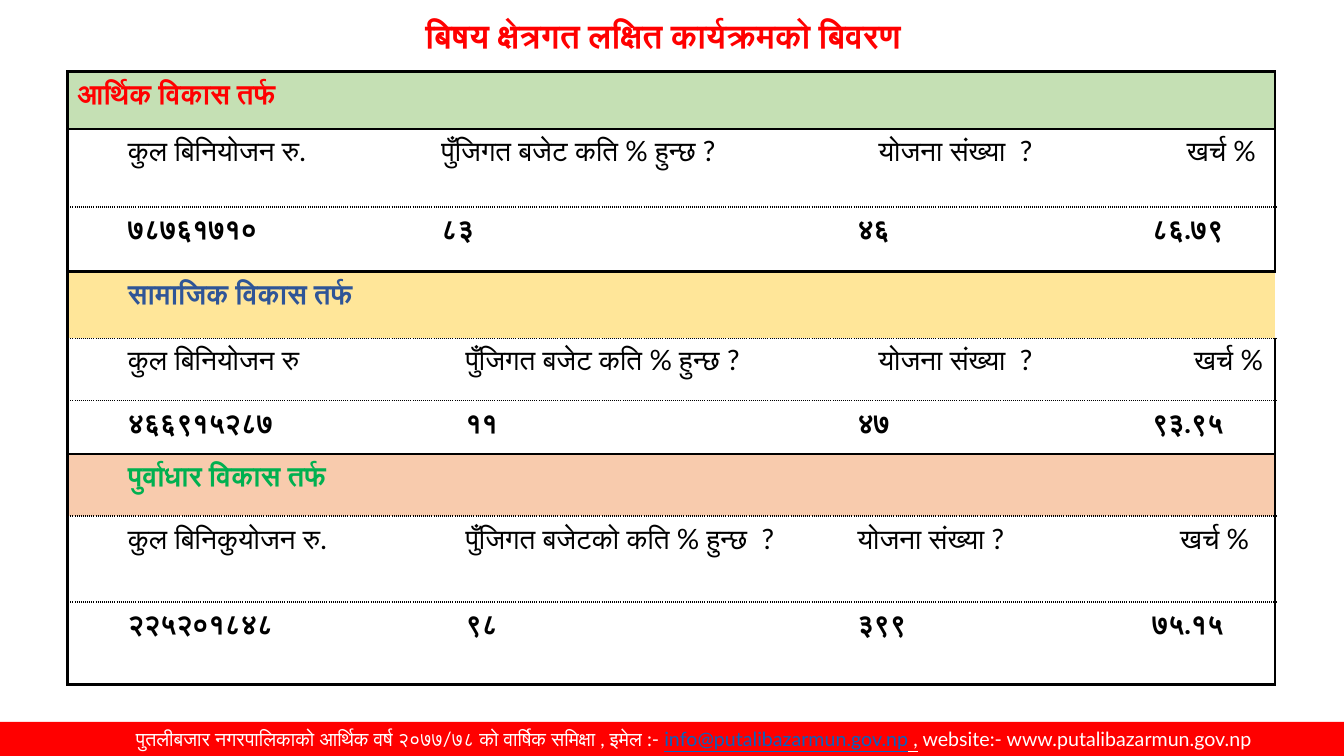
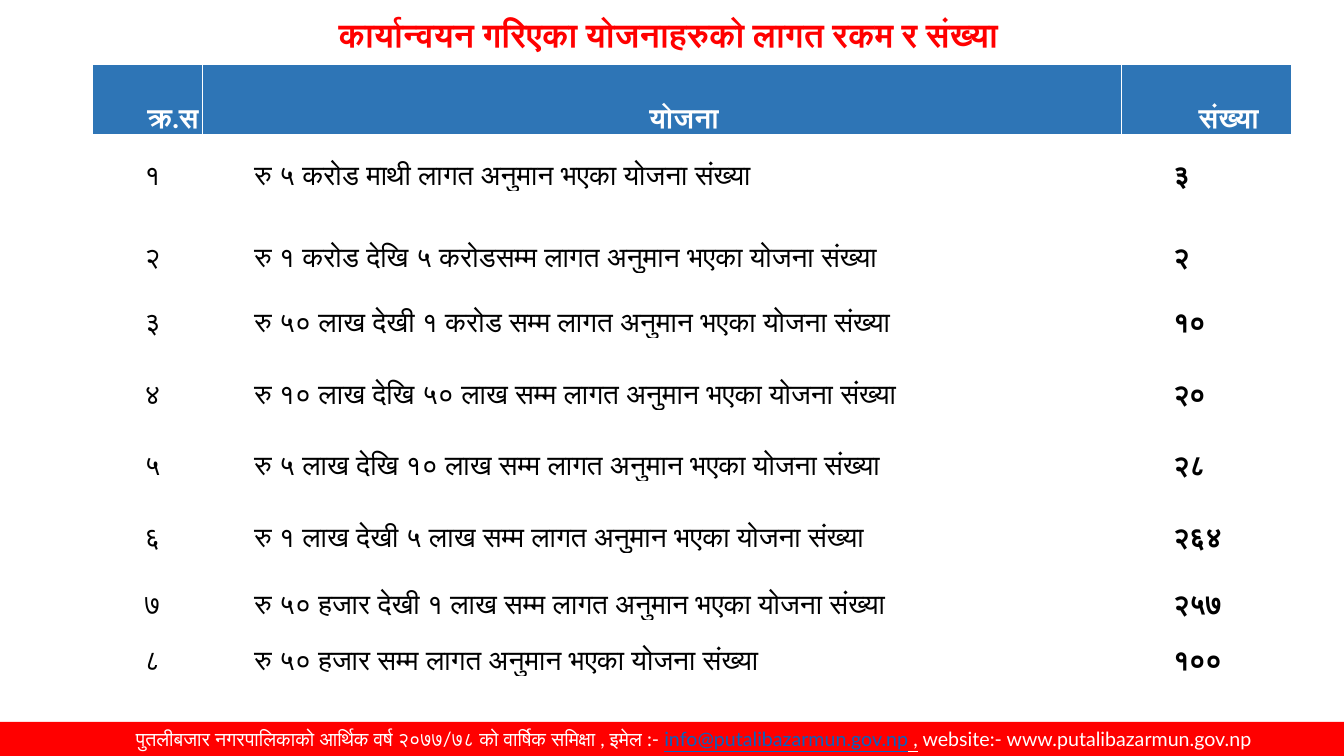
from dataclasses import dataclass
from typing import NamedTuple, Optional

from lxml import etree
from pptx import Presentation
from pptx.dml.color import RGBColor
from pptx.enum.shapes import MSO_SHAPE
from pptx.enum.text import MSO_ANCHOR, MSO_AUTO_SIZE, PP_ALIGN
from pptx.oxml.ns import qn
from pptx.util import Cm, Pt

RECTANGLE = MSO_SHAPE.RECTANGLE
CENTER = PP_ALIGN.CENTER
MIDDLE = MSO_ANCHOR.MIDDLE
BOTTOM = MSO_ANCHOR.BOTTOM
NO_AUTOFIT = MSO_AUTO_SIZE.NONE
TITLE_ONLY = 5


@dataclass(frozen=True)
class Theme:
    font: str = "Lato"
    title_size: int = 24
    table_size: int = 20
    footer_size: int = 14
    red: str = "FF0000"
    black: str = "000000"
    white: str = "FFFFFF"
    link: str = "0563C1"
    navy: str = "2F5597"
    emerald: str = "00B050"
    header_blue: str = "2E75B6"
    pale_green: str = "C5E0B4"
    pale_yellow: str = "FFE699"
    pale_orange: str = "F8CBAD"


THEME = Theme()


class Line(NamedTuple):
    color: str
    width: float
    dash: str = "solid"


class Box(NamedTuple):
    left: float
    top: float
    width: float
    height: float

    def lengths(self) -> tuple:
        return tuple(Cm(value) for value in self)


class Label(NamedTuple):
    text: str
    shift: float = 0


@dataclass(frozen=True)
class Section:
    heading: str
    color: str
    fill: str
    heading_indent: float
    heading_spans: tuple
    spans: tuple
    labels: tuple
    values: tuple
    heading_rule: Line
    heights: tuple


SOLID = Line(THEME.black, 2.25)
DOTTED = Line(THEME.black, 1.5, "sysDot")
FINE_DOTTED = Line(THEME.black, 1, "sysDot")
WHITE_RULE = Line(THEME.white, 1)

SLIDE_WIDTH, SLIDE_HEIGHT = 33.87, 19.05
FOOTER_HEIGHT = 0.86
INDENT = 1.27
HEADER_INSET = 0.03

SECTOR_TITLE = "बिषय क्षेत्रगत लक्षित कार्यक्रमको बिवरण "
SECTOR_COLUMNS = (7.9, 0.41, 9.88, 7.42, 4.62)
WIDE_SECOND = ((0, 0), (1, 2), (3, 3), (4, 4))
WIDE_FIRST = ((0, 1), (2, 2), (3, 3), (4, 4))
FULL_ROW = ((0, 4),)

SECTIONS = (
    Section("आर्थिक विकास तर्फ", THEME.red, THEME.pale_green, 0, WIDE_SECOND, WIDE_SECOND,
            (Label("कुल बिनियोजन रु."), Label("पुँजिगत बजेट कति % हुन्छ ?"),
             Label("योजना संख्या  ?", 0.53), Label("खर्च %", 0.88)),
            ("७८७६१७१०", "८३", "४६", "८६.७९"), SOLID, (1.45, 1.96, 1.63)),
    Section("सामाजिक विकास तर्फ", THEME.navy, THEME.pale_yellow, INDENT, FULL_ROW, WIDE_FIRST,
            (Label("कुल बिनियोजन रु"), Label("पुँजिगत बजेट कति % हुन्छ ?"),
             Label("योजना संख्या  ?", 0.53), Label("खर्च %", 1.06)),
            ("४६६९१५२८७", "११", "४७", "९३.९५"), FINE_DOTTED, (1.68, 1.57, 1.35)),
    Section("पुर्वाधार विकास तर्फ", THEME.emerald, THEME.pale_orange, INDENT, WIDE_FIRST, WIDE_FIRST,
            (Label("कुल बिनिकुयोजन रु."), Label("पुँजिगत बजेटको कति % हुन्छ  ?"),
             Label("योजना संख्या ?"), Label("खर्च %", 0.71)),
            ("२२५२०१८४८", "९८", "३९९", "७५.१५"), DOTTED, (1.57, 2.16, 2.08)),
)

COST_TITLE = "कार्यान्वयन गरिएका योजनाहरुको लागत रकम र संख्या "
COST_COLUMNS = (2.77, 23.16, 4.29)
COST_HEIGHTS = (1.75, 1.45, 2.06, 1.65, 1.8, 1.8, 1.8, 1.7, 1.42)
COST_ROWS = (
    ("क्र.स ", "योजना ", "संख्या "),
    ("१", "रु ५ करोड माथी लागत अनुमान भएका योजना संख्या", "३"),
    ("२", "रु १ करोड देखि ५ करोडसम्म लागत अनुमान भएका योजना संख्या", "२"),
    ("३", "रु ५० लाख देखी १ करोड सम्म लागत अनुमान भएका योजना संख्या", "१०"),
    ("४", "रु १० लाख देखि ५० लाख सम्म लागत अनुमान भएका योजना संख्या", "२०"),
    ("५", "रु ५ लाख देखि १० लाख सम्म लागत अनुमान भएका योजना संख्या", "२८"),
    ("६", "रु १ लाख देखी ५ लाख सम्म लागत अनुमान भएका योजना संख्या", "२६४"),
    ("७", "रु ५० हजार देखी १ लाख सम्म लागत अनुमान भएका योजना संख्या", "२५७"),
    ("८", "रु ५० हजार सम्म लागत अनुमान भएका योजना संख्या", "१००"),
)


def write(paragraph, text: str, *, size: float = THEME.table_size, color: str = THEME.black,
          bold: bool = False, underline: bool = False, align=None,
          indent: float = 0, spacing: Optional[float] = None) -> None:
    """Append a formatted run and set the paragraph's layout."""
    if align is not None:
        paragraph.alignment = align
    if spacing is not None:
        paragraph.line_spacing = spacing
    if indent:
        properties = paragraph._p.get_or_add_pPr()
        properties.set("marL", str(Cm(indent)))
        properties.set("indent", "0")
    run = paragraph.add_run()
    run.text = text
    font = run.font
    font.size, font.bold, font.underline = Pt(size), bold, underline
    font.color.rgb = RGBColor.from_string(color)
    font.name = THEME.font
    etree.SubElement(run._r.get_or_add_rPr(), qn("a:cs"), typeface=THEME.font)


def set_borders(cell, left: Optional[Line], right: Optional[Line],
                top: Optional[Line], bottom: Optional[Line]) -> None:
    """Draw the cell's edges; call before filling, as lines precede the fill in the XML."""
    properties = cell._tc.get_or_add_tcPr()
    for tag, line in (("a:lnL", left), ("a:lnR", right), ("a:lnT", top), ("a:lnB", bottom)):
        edge = etree.SubElement(properties, qn(tag))
        if line is None:
            etree.SubElement(edge, qn("a:noFill"))
            continue
        edge.set("w", str(Pt(line.width)))
        solid = etree.SubElement(edge, qn("a:solidFill"))
        etree.SubElement(solid, qn("a:srgbClr"), val=line.color)
        etree.SubElement(edge, qn("a:prstDash"), val=line.dash)


def set_fill(cell, color: Optional[str]) -> None:
    if color is None:
        cell.fill.background()
    else:
        cell.fill.solid()
        cell.fill.fore_color.rgb = RGBColor.from_string(color)


def add_plain_table(slide, left: float, top: float, widths: tuple, heights: tuple):
    box = Box(left, top, sum(widths), sum(heights))
    table = slide.shapes.add_table(len(heights), len(widths), *box.lengths()).table
    table.first_row = table.horz_banding = False
    for column, width in zip(table.columns, widths):
        column.width = Cm(width)
    for row, height in zip(table.rows, heights):
        row.height = Cm(height)
    return table


def add_titled_slide(presentation, title: str, box: Box):
    slide = presentation.slides.add_slide(presentation.slide_layouts[TITLE_ONLY])
    heading = slide.shapes.title
    heading.left, heading.top, heading.width, heading.height = box.lengths()
    frame = heading.text_frame
    frame.auto_size = NO_AUTOFIT
    frame.vertical_anchor = MIDDLE
    write(frame.paragraphs[0], title, size=THEME.title_size, color=THEME.red,
          bold=True, align=CENTER, spacing=0.9)
    return slide


def move_footer_to_layout(slide) -> None:
    """Build the footer band once and hand it to the layout that all slides share."""
    box = Box(0, SLIDE_HEIGHT - FOOTER_HEIGHT, SLIDE_WIDTH, FOOTER_HEIGHT)
    band = slide.shapes.add_shape(RECTANGLE, *box.lengths())
    band.shadow.inherit = False
    band.fill.solid()
    band.fill.fore_color.rgb = RGBColor.from_string(THEME.red)
    band.line.fill.background()
    frame = band.text_frame
    frame.word_wrap = True
    frame.vertical_anchor = MIDDLE
    frame.margin_top = frame.margin_bottom = 0
    frame.margin_left = Cm(1.35)
    for text, color, underline in (
        ("पुतलीबजार नगरपालिकाको आर्थिक वर्ष २०७७/७८ को वार्षिक समिक्षा , इमेल :- ", THEME.white, False),
        ("info@putalibazarmun.gov.np", THEME.link, True),
        (" ,", THEME.white, True),
        (" website:- www.putalibazarmun.gov.np", THEME.white, False),
    ):
        write(frame.paragraphs[0], text, size=THEME.footer_size, color=color,
              underline=underline, align=CENTER)
    layout_tree = slide.slide_layout.shapes.element
    band.element.nvSpPr.cNvPr.set("id", str(len(layout_tree) + 10))
    layout_tree.append(band.element)


def style_sector_row(table, row: int, spans: tuple, top: Line, bottom: Line,
                     fill: Optional[str] = None) -> None:
    last = len(SECTOR_COLUMNS) - 1
    for column in range(last + 1):
        cell = table.cell(row, column)
        set_borders(cell, SOLID if column == 0 else None,
                    SOLID if column == last else None, top, bottom)
        set_fill(cell, fill)
    for start, end in spans:
        if end > start:
            table.cell(row, start).merge(table.cell(row, end))


def add_sector_table(slide) -> None:
    heights = tuple(height for section in SECTIONS for height in section.heights)
    table = add_plain_table(slide, 1.7, 1.8, SECTOR_COLUMNS, heights)
    for index, section in enumerate(SECTIONS):
        heading_row = 3 * index
        label_row, value_row = heading_row + 1, heading_row + 2
        style_sector_row(table, heading_row, section.heading_spans,
                         SOLID, section.heading_rule, section.fill)
        style_sector_row(table, label_row, section.spans, section.heading_rule, DOTTED)
        style_sector_row(table, value_row, section.spans, DOTTED, SOLID)
        write(table.cell(heading_row, 0).text_frame.paragraphs[0], section.heading,
              color=section.color, bold=True, indent=section.heading_indent)
        for (column, _), label, value in zip(section.spans, section.labels, section.values):
            write(table.cell(label_row, column).text_frame.paragraphs[0], label.text,
                  indent=INDENT + label.shift)
            write(table.cell(value_row, column).text_frame.paragraphs[0], value,
                  bold=True, indent=INDENT)


def add_cost_table(slide) -> None:
    table = add_plain_table(slide, 2.34, 1.63, COST_COLUMNS, COST_HEIGHTS)
    count_column = len(COST_COLUMNS) - 1
    for row, texts in enumerate(COST_ROWS):
        is_header = row == 0
        for column, text in enumerate(texts):
            cell = table.cell(row, column)
            cell.vertical_anchor = BOTTOM
            cell.margin_left = cell.margin_right = cell.margin_top = Cm(HEADER_INSET)
            cell.margin_bottom = 0
            set_borders(cell, *[WHITE_RULE] * 4)
            set_fill(cell, THEME.header_blue if is_header else THEME.white)
            write(cell.text_frame.paragraphs[0], text, indent=INDENT,
                  color=THEME.white if is_header else THEME.black,
                  bold=is_header or column == count_column,
                  align=CENTER if is_header else None)


def main() -> None:
    presentation = Presentation()
    presentation.slide_width, presentation.slide_height = Cm(SLIDE_WIDTH), Cm(SLIDE_HEIGHT)

    sectors = add_titled_slide(presentation, SECTOR_TITLE, Box(8.89, 0.28, 15.85, 1.35))
    move_footer_to_layout(sectors)
    add_sector_table(sectors)

    costs = add_titled_slide(presentation, COST_TITLE, Box(2.34, 0.08, 29.21, 1.68))
    add_cost_table(costs)

    presentation.save("out.pptx")


if __name__ == "__main__":
    main()
